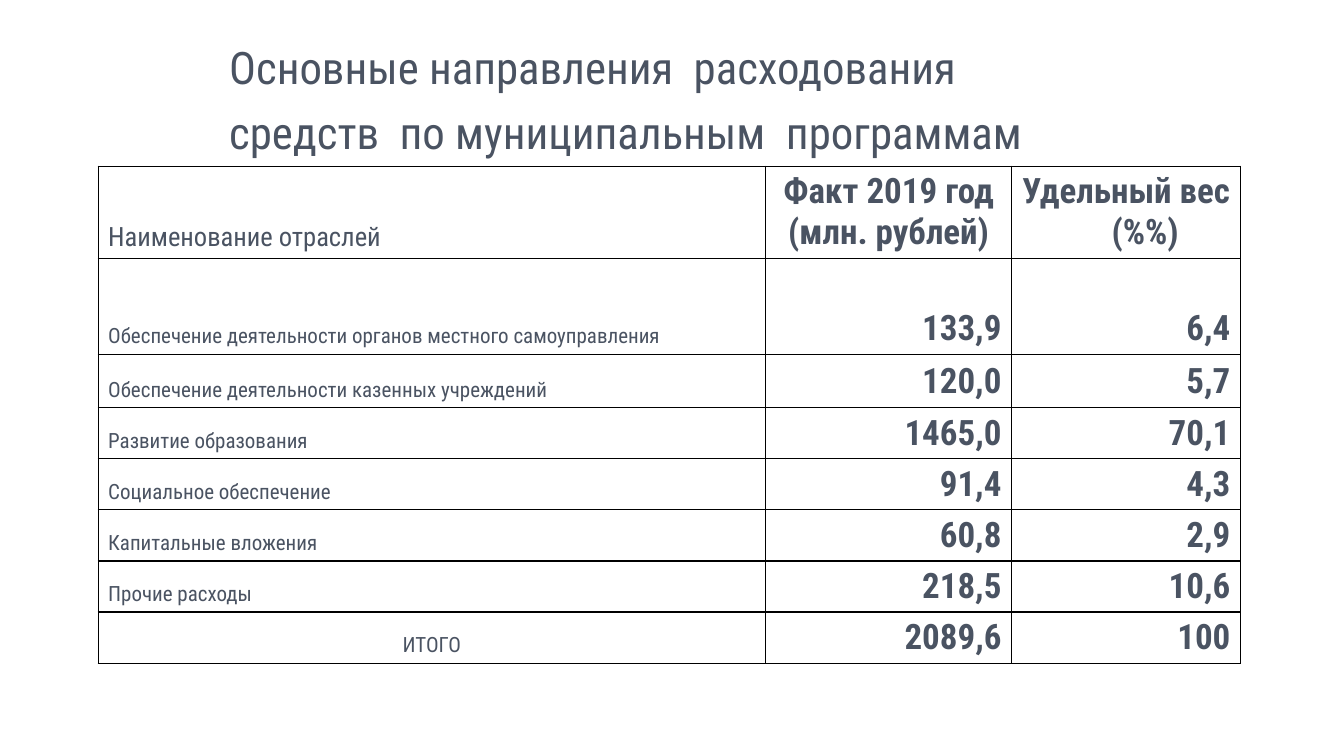
import pptx
import pptx.dml.color
import pptx.enum.text
import pptx.oxml
import pptx.util
from pptx.oxml.ns import nsdecls

SLIDE_WIDTH, SLIDE_HEIGHT = 13.33, 7.5
FONT = "Roboto Condensed"
COLORS = {"text": "4A5362", "border": "000000"}
ALIGN = pptx.enum.text.PP_ALIGN
ANCHOR = pptx.enum.text.MSO_ANCHOR
HANGING_INDENT = 0.38

TITLE = "Основные направления  расходования  средств  по муниципальным  программам"
COLUMN_WIDTHS = [6.62, 2.44, 2.27]
ROW_HEIGHTS = [0.84, 0.95, 0.53] + [0.47] * 5
HEADER = ["Наименование отраслей", "Факт 2019 год\n(млн. рублей)", "Удельный вес (%%)"]
EXPENSES = [
    ["Обеспечение деятельности органов местного самоуправления", "133,9", "6,4"],
    ["Обеспечение деятельности казенных учреждений", "120,0", "5,7"],
    ["Развитие образования", "1465,0", "70,1"],
    ["Социальное обеспечение", "91,4", "4,3"],
    ["Капитальные вложения", "60,8", "2,9"],
    ["Прочие расходы", "218,5", "10,6"],
    ["ИТОГО", "2089,6", "100"],
]


def across(share):
    return pptx.util.Inches(SLIDE_WIDTH * share)


def down(share):
    return pptx.util.Inches(SLIDE_HEIGHT * share)


def format_paragraph(paragraph, size, bold, alignment):
    paragraph.alignment = alignment
    paragraph.font.name = FONT
    paragraph.font.size = pptx.util.Pt(size)
    paragraph.font.bold = bold
    paragraph.font.color.rgb = pptx.dml.color.RGBColor.from_string(COLORS["text"])


def set_hanging_indent(paragraph):
    properties = paragraph._p.get_or_add_pPr()
    indent = pptx.util.Inches(HANGING_INDENT)
    properties.set("marL", str(indent))
    properties.set("indent", str(-indent))


def add_borders(cell):
    properties = cell._tc.get_or_add_tcPr()
    for side in ("lnL", "lnR", "lnT", "lnB"):
        properties.append(pptx.oxml.parse_xml(
            f'<a:{side} {nsdecls("a")} w="{pptx.util.Pt(1)}"><a:solidFill>'
            f'<a:srgbClr val="{COLORS["border"]}"/></a:solidFill></a:{side}>'))


def fill_cell(cell, text, size, bold, alignment):
    add_borders(cell)
    cell.fill.background()
    cell.vertical_anchor = ANCHOR.BOTTOM
    cell.text = text
    for paragraph in cell.text_frame.paragraphs:
        set_hanging_indent(paragraph)
        format_paragraph(paragraph, size, bold, alignment)


def cell_style(row, column):
    """Return the size, weight and alignment for a place in the table."""
    if column > 0:
        return 25, True, ALIGN.CENTER if row == 0 else ALIGN.RIGHT
    is_total = row == len(EXPENSES)
    return 19 if row == 0 else 15, False, ALIGN.CENTER if is_total else ALIGN.LEFT


def add_title(slide):
    title = slide.shapes.title
    title.left, title.top = across(0.163), down(0.028)
    title.width, title.height = across(0.675), down(0.2)
    frame = title.text_frame
    frame.text = TITLE
    frame.word_wrap = True
    frame.auto_size = pptx.enum.text.MSO_AUTO_SIZE.NONE
    frame.vertical_anchor = ANCHOR.MIDDLE
    frame.margin_bottom = pptx.util.Inches(0.11)
    paragraph = frame.paragraphs[0]
    paragraph.line_spacing = 1.2
    format_paragraph(paragraph, 32, False, ALIGN.LEFT)


def add_expense_table(slide):
    rows = [HEADER] + EXPENSES
    table = slide.shapes.add_table(
        len(rows), len(HEADER), across(0.073), down(0.22),
        pptx.util.Inches(sum(COLUMN_WIDTHS)), pptx.util.Inches(sum(ROW_HEIGHTS))).table
    table.first_row = table.horz_banding = False
    for column, width in zip(table.columns, COLUMN_WIDTHS):
        column.width = pptx.util.Inches(width)
    for row, height in zip(table.rows, ROW_HEIGHTS):
        row.height = pptx.util.Inches(height)
    for row, texts in enumerate(rows):
        for column, text in enumerate(texts):
            fill_cell(table.cell(row, column), text, *cell_style(row, column))


def main():
    presentation = pptx.Presentation()
    presentation.slide_width = across(1)
    presentation.slide_height = down(1)
    slide = presentation.slides.add_slide(presentation.slide_layouts.get_by_name("Title Only"))
    add_title(slide)
    add_expense_table(slide)
    presentation.save("out.pptx")


if __name__ == "__main__":
    main()
